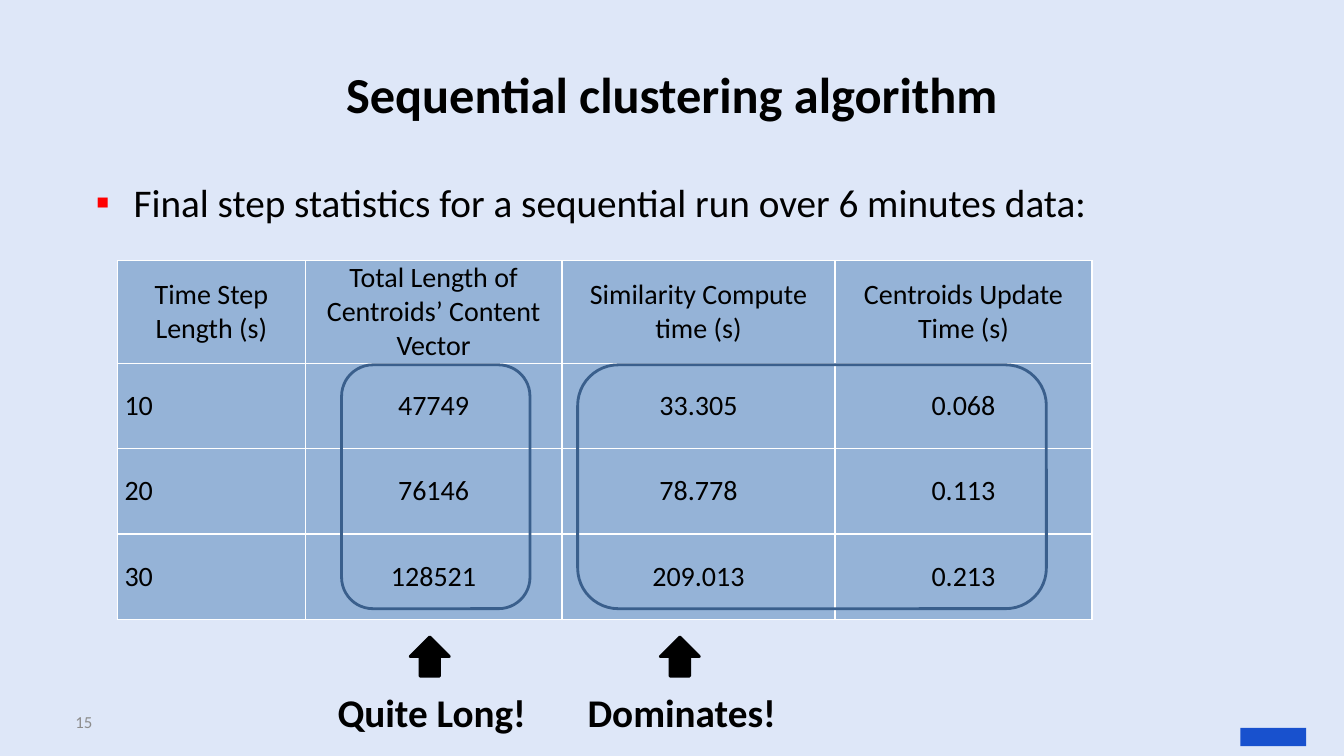
"""Build the slide on run statistics of the sequential clustering algorithm."""
import dataclasses

import lxml.etree
import pptx
import pptx.dml.color
import pptx.enum.shapes
import pptx.enum.text
import pptx.oxml
import pptx.oxml.ns
import pptx.util

Pt = pptx.util.Pt
Shape = pptx.enum.shapes.MSO_SHAPE
Align = pptx.enum.text.PP_ALIGN
Anchor = pptx.enum.text.MSO_ANCHOR


def color(code):
    return pptx.dml.color.RGBColor.from_string(code)


@dataclasses.dataclass(frozen=True)
class Theme:
    font: str = "Calibri"
    back: str = "DEE7F8"
    ink: str = "000000"
    mute: str = "8C8C8C"
    mark: str = "FF0000"
    cell: str = "95B3D7"
    grid: str = "FFFFFF"
    ring: str = "3A5F8C"
    badge: str = "1851CE"
    title: int = 36
    body: int = 28
    table: int = 20
    small: int = 12


class Deck:
    def __init__(self, theme):
        self.theme = theme
        self.file = pptx.Presentation()
        self.file.slide_width, self.file.slide_height = Pt(960), Pt(540)
        self.slide = self.file.slides.add_slide(self.file.slide_layouts[1])
        fill = self.slide.background.fill
        fill.solid()
        fill.fore_color.rgb = color(theme.back)

    def style(self, frame, text, size, bold=False, tint=None, align=Align.LEFT):
        frame.text = text
        frame.word_wrap = True
        line = frame.paragraphs[0]
        line.alignment = align
        line.space_before = Pt(0)
        font = line.runs[0].font
        font.name, font.size, font.bold = self.theme.font, Pt(size), bold
        font.color.rgb = color(tint or self.theme.ink)

    def place(self, holder, left, top, width, height):
        holder.left, holder.top = Pt(left), Pt(top)
        holder.width, holder.height = Pt(width), Pt(height)

    def title(self, text, *area):
        holder = self.slide.shapes.title
        self.place(holder, *area)
        self.style(holder.text_frame, text, self.theme.title, True, align=Align.CENTER)
        holder.text_frame.vertical_anchor = Anchor.MIDDLE

    def bullet(self, text, *area):
        holder = self.slide.placeholders[1]
        self.place(holder, *area)
        frame = holder.text_frame
        self.style(frame, text, self.theme.body)
        frame.vertical_anchor = Anchor.TOP
        frame.auto_size = pptx.enum.text.MSO_AUTO_SIZE.NONE
        line = frame.paragraphs[0]
        line.space_after = Pt(6)
        props = line._p.get_or_add_pPr()
        props.set("marL", str(Pt(27)))
        props.set("indent", str(-Pt(27)))
        qn = pptx.oxml.ns.qn
        tint = lxml.etree.SubElement(props, qn("a:buClr"))
        lxml.etree.SubElement(tint, qn("a:srgbClr"), val=self.theme.mark)
        lxml.etree.SubElement(props, qn("a:buFont"), typeface=self.theme.font)
        lxml.etree.SubElement(props, qn("a:buChar"), char="▪")

    def label(self, text, size, *area, bold=False, tint=None, anchor=Anchor.TOP):
        box = self.slide.shapes.add_textbox(*map(Pt, area))
        self.style(box.text_frame, text, size, bold, tint)
        box.text_frame.vertical_anchor = anchor

    def shape(self, kind, *area, fill=None, line=None):
        item = self.slide.shapes.add_shape(kind, *map(Pt, area))
        item.shadow.inherit = False
        if fill:
            item.fill.solid()
            item.fill.fore_color.rgb = color(fill)
        else:
            item.fill.background()
        if line:
            item.line.color.rgb = color(line)
            item.line.width = Pt(2)
        else:
            item.line.fill.background()

    def border(self, cell):
        props = cell._tc.get_or_add_tcPr()
        for spot, side in enumerate("LRTB"):
            props.insert(spot, pptx.oxml.parse_xml(
                f'<a:ln{side} {pptx.oxml.ns.nsdecls("a")} w="{Pt(1)}"><a:solidFill>'
                f'<a:srgbClr val="{self.theme.grid}"/></a:solidFill></a:ln{side}>'))

    def table(self, data, left, top, widths, heights):
        area = (left, top, sum(widths), sum(heights))
        table = self.slide.shapes.add_table(
            len(heights), len(widths), *map(Pt, area)).table
        table.first_row = table.horz_banding = False
        for col, width in zip(table.columns, widths):
            col.width = Pt(width)
        for row, height in zip(table.rows, heights):
            row.height = Pt(height)
        for r, texts in enumerate(data):
            for c, text in enumerate(texts):
                cell = table.cell(r, c)
                align = Align.JUSTIFY if r and not c else Align.CENTER
                self.style(cell.text_frame, text, self.theme.table, align=align)
                cell.vertical_anchor = Anchor.MIDDLE
                cell.margin_left = cell.margin_right = Pt(5)
                cell.margin_top = cell.margin_bottom = Pt(0)
                cell.fill.solid()
                cell.fill.fore_color.rgb = color(self.theme.cell)
                self.border(cell)


def main():
    theme = Theme()
    deck = Deck(theme)
    deck.title("Sequential clustering algorithm", 48, 21.6, 864, 90)
    deck.bullet("Final step statistics for a sequential run over 6 minutes data:",
                61.2, 124, 828, 46.8)
    data = [
        ("Time Step Length (s)", "Total Length of Centroids’ Content Vector",
         "Similarity Compute time (s)", "Centroids Update Time (s)"),
        ("10", "47749", "33.305", "0.068"),
        ("20", "76146", "78.778", "0.113"),
        ("30", "128521", "209.013", "0.213"),
    ]
    deck.table(data, 84, 186, [134, 183.5, 195, 183.5], [73, 61, 61, 61])
    notes = [("Dominates!", 412.6, 412.6, 334.8), ("Quite Long!", 234, 244, 134.6)]
    for text, left, ring, width in notes:
        deck.shape(Shape.ROUNDED_RECTANGLE, ring, 260.6, width, 174.2, line=theme.ring)
        deck.label(text, theme.body, left, 488.2, 154.8, 41, bold=True)
        deck.shape(Shape.UP_ARROW, left + 59, 455, 28, 28,
                   fill=theme.ink, line=theme.ink)
    deck.label("15", theme.small, 46.8, 501, 224, 28.8,
               tint=theme.mute, anchor=Anchor.MIDDLE)
    deck.shape(Shape.RECTANGLE, 886, 520, 47, 13, fill=theme.badge)
    deck.file.save("out.pptx")


if __name__ == "__main__":
    main()
